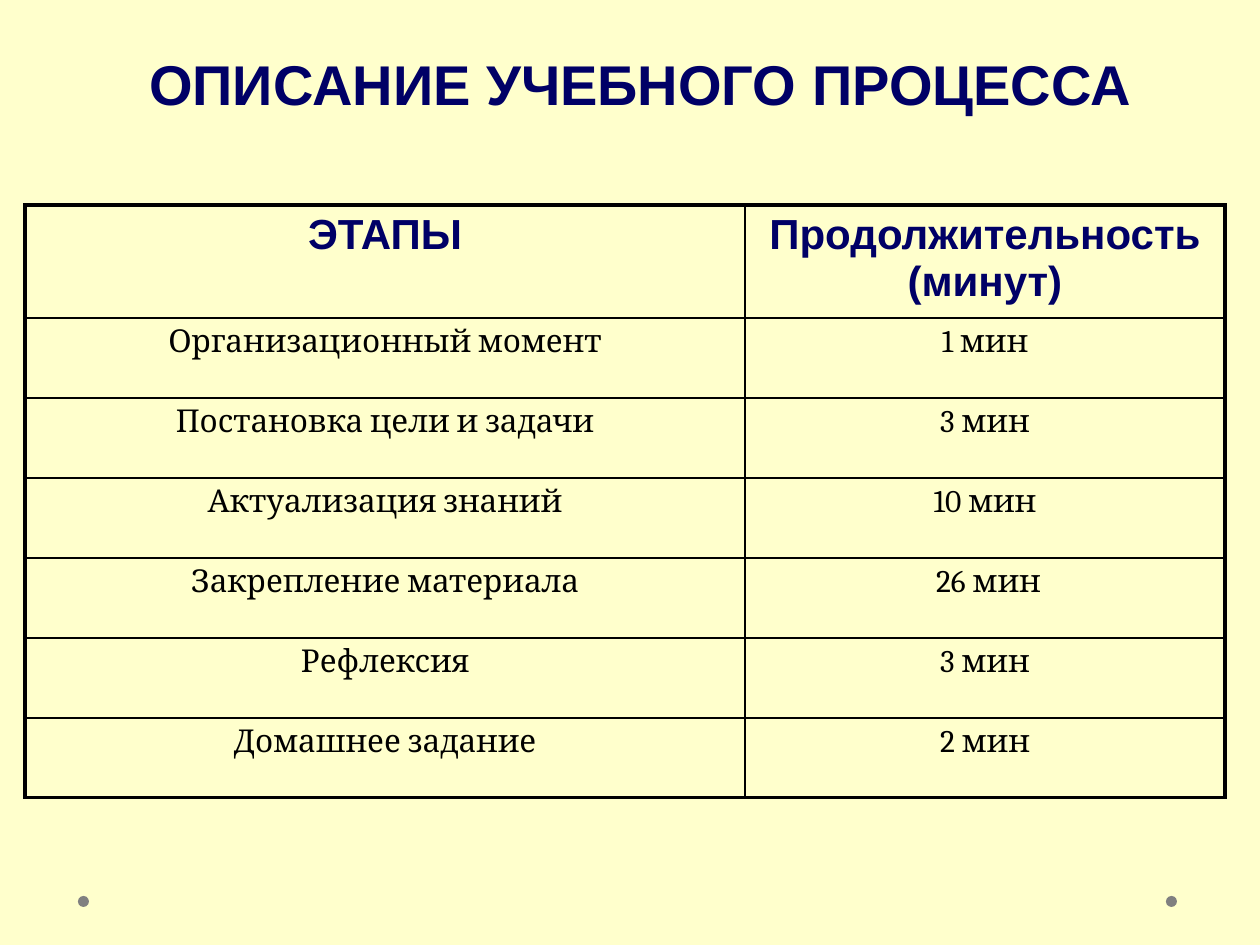
from lxml.etree import SubElement
from pptx import Presentation
from pptx.dml.color import RGBColor
from pptx.enum.shapes import MSO_SHAPE
from pptx.enum.text import MSO_ANCHOR, MSO_AUTO_SIZE, PP_ALIGN
from pptx.oxml.ns import qn
from pptx.util import Emu, Pt

CREAM = RGBColor(0xFF, 0xFF, 0xCC)
NAVY = RGBColor(0x00, 0x00, 0x66)
BLACK = RGBColor(0x00, 0x00, 0x00)
GRAY = RGBColor(0x80, 0x80, 0x80)

STAGES = [
    ("ЭТАПЫ", "Продолжительность (минут)"),
    ("Организационный момент", "1 мин"),
    ("Постановка цели и задачи", "3 мин"),
    ("Актуализация знаний", "10 мин"),
    ("Закрепление материала", " 26 мин"),
    ("Рефлексия", "3 мин"),
    ("Домашнее задание", "2 мин"),
]
COLS = (720, 480)
HEAD, ROW = 113, 80
THICK, THIN = 2.25, 1


def px(n):
    return Emu(round(n * 914400 / 126))


def put_text(frame, text, font, size, color, bold):
    frame.text = text
    para = frame.paragraphs[0]
    para.alignment = PP_ALIGN.CENTER
    style = para.runs[0].font
    style.name, style.size, style.bold = font, Pt(size), bold
    style.color.rgb = color


def add_title(slide, text):
    title = slide.shapes.title
    title.left, title.top = px(95), px(35)
    title.width, title.height = px(1091), px(79)
    frame = title.text_frame
    frame.word_wrap = True
    frame.auto_size = MSO_AUTO_SIZE.NONE
    frame.vertical_anchor = MSO_ANCHOR.TOP
    frame.margin_top, frame.margin_bottom = px(14), 0
    put_text(frame, text, "Arial", 32, NAVY, True)


def add_edge(cell, side, width):
    line = SubElement(cell._tc.get_or_add_tcPr(), qn("a:ln" + side), w=str(Pt(width)))
    fill = SubElement(line, qn("a:solidFill"))
    SubElement(fill, qn("a:srgbClr"), val=str(BLACK))


def add_table(slide, data):
    count = len(data)
    high = HEAD + ROW * (count - 1)
    frame = slide.shapes.add_table(count, len(COLS), px(25), px(205), px(sum(COLS)), px(high))
    table = frame.table
    table.first_row = table.horz_banding = False
    for col, wide in zip(table.columns, COLS):
        col.width = px(wide)
    for r, texts in enumerate(data):
        table.rows[r].height = px(ROW if r else HEAD)
        for c, text in enumerate(texts):
            cell = table.cell(r, c)
            # Thick outer frame, thin inner grid
            outer = {"L": c == 0, "R": c == len(COLS) - 1, "T": r == 0, "B": r == count - 1}
            for side, thick in outer.items():
                add_edge(cell, side, THICK if thick else THIN)
            cell.fill.background()
            if r == 0:
                put_text(cell.text_frame, text, "Arial", 24, NAVY, True)
            else:
                put_text(cell.text_frame, text, "Cambria", 18, BLACK, False)


def add_dot(slide, left):
    dot = slide.shapes.add_shape(MSO_SHAPE.OVAL, px(left), px(896), px(11), px(11))
    dot.shadow.inherit = False
    dot.fill.solid()
    dot.fill.fore_color.rgb = GRAY
    dot.line.fill.background()


def main():
    deck = Presentation()
    deck.slide_width, deck.slide_height = px(1260), px(945)
    slide = deck.slides.add_slide(deck.slide_layouts.get_by_name("Title Only"))
    slide.background.fill.solid()
    slide.background.fill.fore_color.rgb = CREAM

    # Footer dots
    for left in (1166, 78):
        add_dot(slide, left)

    # Heading and schedule
    add_title(slide, "ОПИСАНИЕ УЧЕБНОГО ПРОЦЕССА")
    add_table(slide, STAGES)
    deck.save("out.pptx")


if __name__ == "__main__":
    main()
